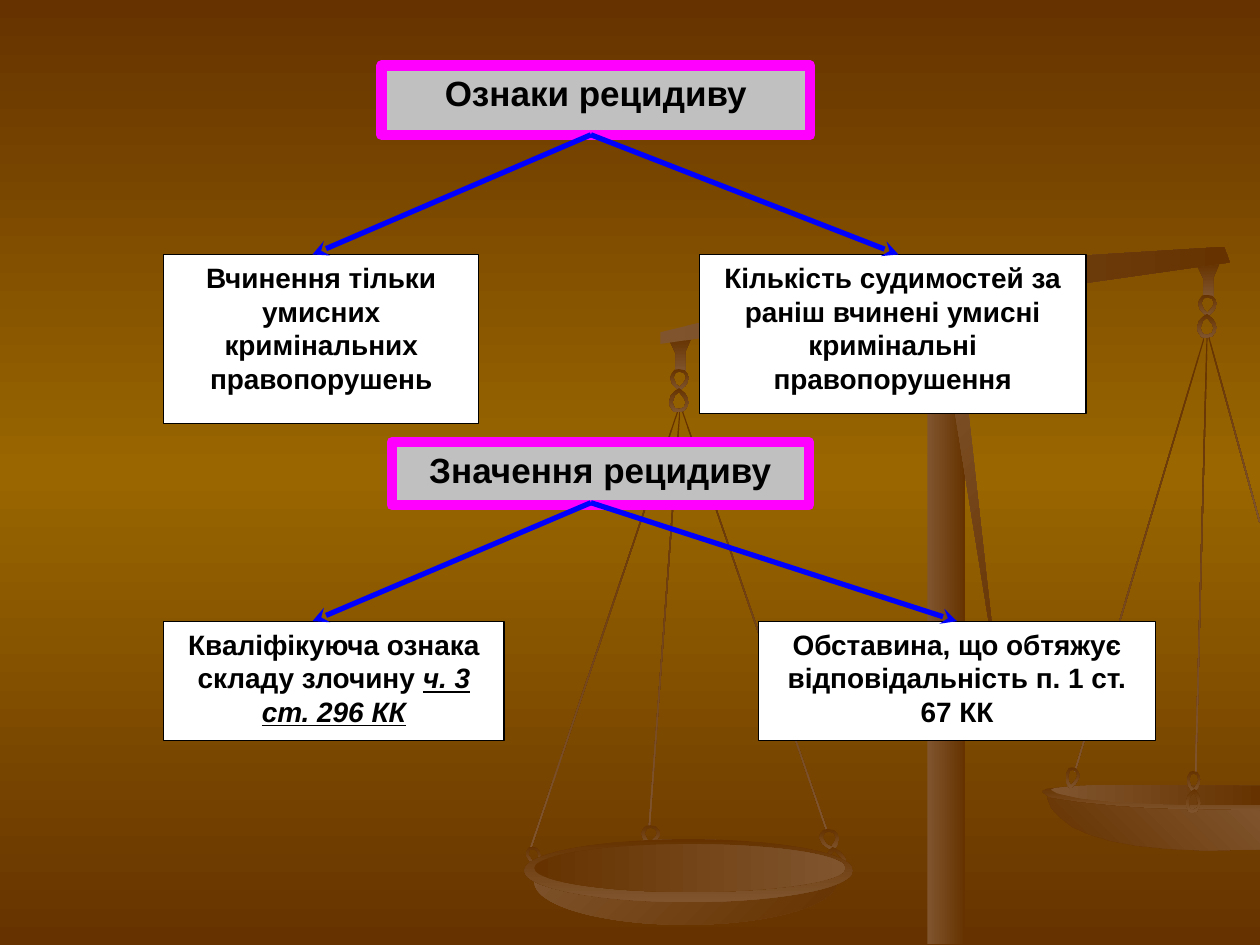
from pptx import Presentation
from pptx.util import Inches, Pt
from pptx.dml.color import RGBColor
from pptx.enum.shapes import MSO_SHAPE, MSO_CONNECTOR
from pptx.enum.text import PP_ALIGN, MSO_ANCHOR
from pptx.oxml.ns import qn
from lxml import etree
from copy import deepcopy

BROWN = RGBColor(0x66, 0x33, 0x00)
GOLD = RGBColor(0x99, 0x66, 0x00)
TAN = RGBColor(0x80, 0x55, 0x2E)
GREY = RGBColor(0xC0, 0xC0, 0xC0)
PINK = RGBColor(0xFF, 0x00, 0xFF)
WHITE = RGBColor(0xFF, 0xFF, 0xFF)
BLACK = RGBColor(0x00, 0x00, 0x00)
BLUE = RGBColor(0x00, 0x00, 0xFF)


def shade(fill, first, last, angle):
    """Two-colour gradient; the angle runs clockwise."""
    fill.gradient()
    fill.gradient_angle = (360 - angle) % 360
    for stop, color in zip(fill.gradient_stops, (first, last)):
        stop.color.rgb = color


def tint(shape, first, last, angle):
    shape.shadow.inherit = False
    shape.line.fill.background()
    shade(shape.fill, first, last, angle)


def solid(slide, kind, box, first, last, angle, turn=0):
    shape = slide.shapes.add_shape(kind, *map(Inches, box))
    shape.rotation = turn
    tint(shape, first, last, angle)


def outline(slide, box, loops, first=BROWN, last=TAN, angle=90):
    """Closed loops whose points are fractions of the box."""
    left, top, width, height = box
    loops = [[(Inches(left + x * width), Inches(top + y * height))
              for x, y in loop] for loop in loops]
    path = slide.shapes.build_freeform(*loops[0][0])
    path.add_line_segments(loops[0][1:], close=True)
    for loop in loops[1:]:
        path.move_to(*loop[0])
        path.add_line_segments(loop[1:], close=True)
    tint(path.convert_to_shape(), first, last, angle)


def link(slide, box, tip=0.5, flip=False):
    """Chain link: a ring drawn out to a tip, below or (flipped) above."""
    outer = [(0.5, 1), (0.8, 0.78), (0.95, 0.55), (1, 0.4), (0.93, 0.25),
             (0.75, 0.05), (0.45, 0), (0.22, 0.03), (0.05, 0.25),
             (0, 0.42), (0.1, 0.7), (0.3, 0.88)]
    inner = [(0.5, 0.12), (0.75, 0.2), (0.83, 0.4), (0.75, 0.57),
             (0.5, 0.83), (0.3, 0.7), (0.17, 0.4), (0.28, 0.17)]
    loops = [[(x + (tip - 0.5) * y ** 3, 1 - y if flip else y)
              for x, y in loop] for loop in (outer, inner)]
    outline(slide, box, loops)


def hook(slide, left, top):
    """Hook with two links hanging under the beam."""
    outline(slide, (left, top, 0.18, 0.27),
            [[(1, 0), (0, 0.06), (0.28, 0.45), (0.28, 1), (0.72, 1),
              (0.72, 0.42)]])
    link(slide, (left + 0.01, top + 0.25, 0.15, 0.17))
    link(slide, (left, top + 0.4, 0.16, 0.19), flip=True)


def half_pan(slide, box):
    """Pan that is cut off by the right edge of the slide."""
    left, top, width, height = box
    rim = [(1, 0.05), (0.76, 0.03), (0.4, 0.02), (0.22, 0.02), (0.1, 0.07),
           (0.02, 0.15), (0, 0.24), (0.03, 0.42), (0.14, 0.66),
           (0.29, 0.82), (0.5, 0.94), (0.76, 1), (1, 1)]
    bowl = [(0, 0), (0.02, 0.2), (0.06, 0.37), (0.12, 0.56), (0.2, 0.7),
            (0.3, 0.82), (0.42, 0.91), (0.57, 0.97), (0.74, 1), (1, 0.98),
            (1, 0.24), (0.72, 0.23), (0.5, 0.21), (0.32, 0.16), (0.15, 0.09)]
    outline(slide, (left, top, width, 0.22), [rim])
    outline(slide, (left + 0.04, top + 0.1, width - 0.04, height - 0.1),
            [bowl], angle=315)
    outline(slide, (left + 0.07, top, width - 0.07, 0.16), [rim],
            TAN, BROWN, 0)


def full_pan(slide, box):
    left, top, width, height = box
    oval = MSO_SHAPE.OVAL
    solid(slide, oval, (left + 0.08, top, width - 0.21, height),
          TAN, BROWN, 45)
    solid(slide, oval, (left, top, width, 0.5), BROWN, TAN, 90)
    solid(slide, oval, (left + 0.08, top + 0.04, width - 0.14, 0.38),
          BROWN, TAN, 0)


def scales(slide):
    """Background scales of justice."""
    strands = [(9.04, 2.6, 3.6, 16.6), (9.53, 2.66, 3.47, 1.5),
               (9.79, 2.64, 1.53, 344.6), (5.98, 3.15, 3.53, 341),
               (4.79, 3.16, 3.68, 18.6), (5.27, 3.25, 3.31, 4.2)]
    for left, top, height, turn in strands:
        solid(slide, MSO_SHAPE.RECTANGLE, (left, top, 0.01, height),
              BROWN, TAN, 90, turn)
    half_pan(slide, (8.27, 6.23, 1.73, 0.52))
    for left, top in ((5.31, 2.68), (9.5, 2.09)):
        hook(slide, left, top)
    # Links on the pans
    for box, tip in (((8.46, 6.09, 0.11, 0.17), 0.3),
                     ((9.42, 6.12, 0.11, 0.17), 0.5),
                     ((5.09, 6.55, 0.15, 0.16), 0.5),
                     ((6.5, 6.58, 0.16, 0.17), 0.7),
                     ((4.17, 6.72, 0.12, 0.16), 0.95)):
        link(slide, box, tip)
    for box, tip in (((6.56, 6.72, 0.16, 0.19), 0.3),
                     ((9.41, 6.26, 0.12, 0.19), 0.6)):
        link(slide, box, tip, flip=True)
    # Beam
    outline(slide, (5.24, 1.96, 4.52, 0.77),
            [[(0.99, 0), (1, 0.16), (0, 1), (0, 0.88), (0.47, 0.21),
              (0.52, 0.17)]], TAN, BROWN, 0)
    full_pan(slide, (4.16, 6.66, 2.61, 0.68))
    # Post and brace
    solid(slide, MSO_SHAPE.RECTANGLE, (7.36, 3.08, 0.3, 4.41), TAN, BROWN, 0)
    outline(slide, (7.48, 2.65, 0.44, 2.74),
            [[(1, 1), (0.05, 0.05), (0, 0.01), (0.27, 0), (0.34, 0.04)]],
            TAN, BROWN, 45)


def write(shape, *parts, size=16, color=BLACK):
    """Centred bold text; every second part is italic and underlined."""
    frame = shape.text_frame
    frame.word_wrap = True
    frame.vertical_anchor = MSO_ANCHOR.TOP
    para = frame.paragraphs[0]
    para.alignment = PP_ALIGN.CENTER
    for num, part in enumerate(parts):
        run = para.add_run()
        run.text = part
        font = run.font
        font.name, font.size, font.bold = "Arial", Pt(size), True
        font.color.rgb = color
        if num % 2:
            font.italic = font.underline = True


def panel(slide, box, *parts, fill=WHITE, edge=BLACK, weight=0.75, size=16):
    shape = slide.shapes.add_shape(MSO_SHAPE.RECTANGLE, *map(Inches, box))
    shape.shadow.inherit = False
    shape.fill.solid()
    shape.fill.fore_color.rgb = fill
    shape.line.color.rgb = edge
    shape.line.width = Pt(weight)
    write(shape, *parts, size=size)
    return shape


def arrow(slide, start, end, target):
    line = slide.shapes.add_connector(MSO_CONNECTOR.STRAIGHT,
                                      *map(Inches, start + end))
    middle = target.left + target.width // 2
    if abs(middle - Inches(end[0])) < Inches(0.02):
        line.end_connect(target, 0)
    line.line.color.rgb = BLUE
    line.line.width = Pt(3)
    tail = etree.SubElement(line.line._get_or_add_ln(), qn("a:tailEnd"))
    tail.set("type", "stealth")
    etree.SubElement(line._element.spPr, qn("a:effectLst"))


def fork(slide, box, title, start, leaves):
    """Heading with an arrow to each leaf: box, arrow end, text parts."""
    panel(slide, box, title, fill=GREY, edge=PINK, weight=6, size=20)
    for place, end, parts in leaves:
        target = panel(slide, place, *parts)
        arrow(slide, start, (end, place[1]), target)


def main():
    deck = Presentation()
    deck.slide_width, deck.slide_height = Inches(10), Inches(7.5)
    slide = deck.slides.add_slide(deck.slide_layouts[6])
    # Background: brown, gold, brown
    fill = slide.background.fill
    shade(fill, BROWN, GOLD, 90)
    stops = slide.background._cSld.find(".//" + qn("a:gsLst"))
    stops.append(deepcopy(stops[0]))
    for stop, place in zip(stops, (0, 50000, 100000)):
        stop.set("pos", str(place))
    scales(slide)
    fork(slide, (3.03, 0.52, 3.4, 0.55), "Ознаки рецидиву", (4.69, 1.07), [
        ((1.3, 2.02, 2.5, 1.34), 2.48,
         ["Вчинення тільки умисних кримінальних правопорушень"]),
        ((5.55, 2.02, 3.07, 1.26), 7.13,
         ["Кількість судимостей за раніш вчинені умисні кримінальні "
          "правопорушення"])])
    fork(slide, (3.11, 3.51, 3.31, 0.5), "Значення рецидиву", (4.69, 3.99), [
        ((1.3, 4.93, 2.7, 0.95), 2.48,
         ["Кваліфікуюча ознака складу злочину ", "ч. 3 ст. 296 КК"]),
        ((6.02, 4.93, 3.15, 0.95), 7.6,
         ["Обставина, що обтяжує відповідальність п. 1 ст. 67 КК"])])
    deck.save("out.pptx")


if __name__ == "__main__":
    main()
